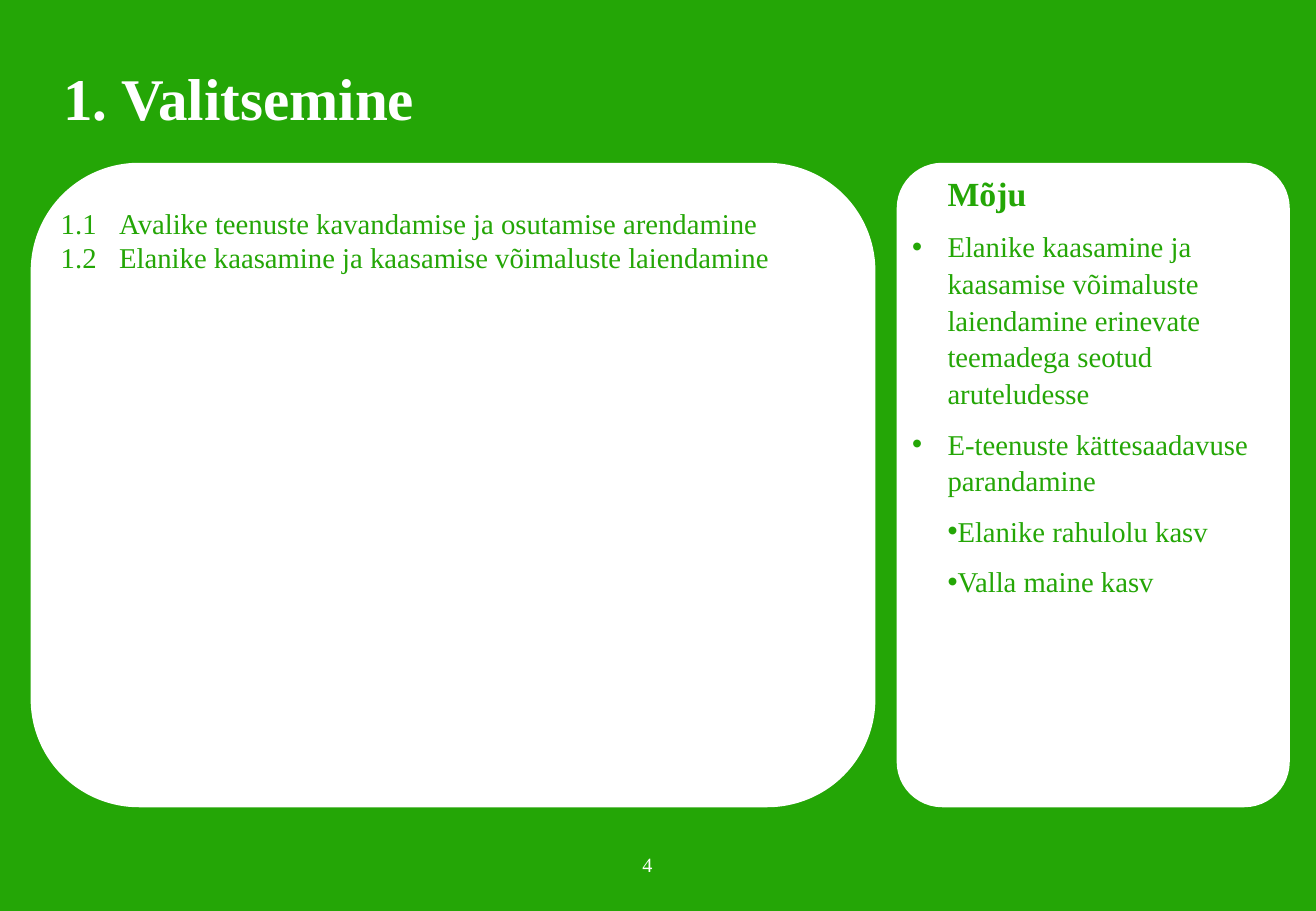
from pptx import Presentation
from pptx.dml.color import RGBColor
from pptx.enum.shapes import MSO_SHAPE as SHAPE
from pptx.enum.text import MSO_ANCHOR as ANCHOR, PP_ALIGN as ALIGN
from pptx.oxml.ns import qn
from pptx.util import Pt
from lxml.etree import SubElement

GREEN, WHITE = "24A606", "FFFFFF"


def color(value):
    return RGBColor.from_string(value)


def add_text(p, text, size=17, fill=GREEN, bold=False, font="Times New Roman",
             align=None, left=0, indent=0, spacing=None, after=0, bullet=None):
    r = p.add_run()
    r.text = text
    r.font.name = font
    r.font.size = Pt(size)
    r.font.bold = bold
    r.font.color.rgb = color(fill)
    p.alignment = align
    p.space_after = Pt(after)
    if spacing:
        p.line_spacing = spacing
    pPr = p._p.get_or_add_pPr()
    pPr.set("marL", str(Pt(left)))
    pPr.set("indent", str(Pt(indent)))
    if bullet:
        SubElement(pPr, qn("a:buFont"), typeface="Arial")
        SubElement(pPr, qn("a:buChar"), char=bullet)


class Deck:
    """Holds the slide style and the current slide."""

    def __init__(self, width, height, background):
        self.prs = Presentation()
        self.prs.slide_width, self.prs.slide_height = Pt(width), Pt(height)
        self.s = self.prs.slides.add_slide(self.prs.slide_layouts[6])
        self.s.background.fill.solid()
        self.s.background.fill.fore_color.rgb = color(background)

    def panel(self, x, y, w, h, corner):
        sp = self.s.shapes.add_shape(SHAPE.ROUNDED_RECTANGLE, Pt(x), Pt(y), Pt(w), Pt(h))
        sp.adjustments[0] = corner
        sp.shadow.inherit = False
        sp.fill.solid()
        sp.fill.fore_color.rgb = color(WHITE)
        sp.line.color.rgb = color(WHITE)
        sp.line.width = Pt(1)

    def text(self, x, y, w, h, items, inset=3.6, anchor=ANCHOR.MIDDLE, wrap=True):
        tf = self.s.shapes.add_textbox(Pt(x), Pt(y), Pt(w), Pt(h)).text_frame
        tf.word_wrap = wrap
        tf.vertical_anchor = anchor
        tf.margin_left = tf.margin_right = Pt(inset)
        tf.margin_top = tf.margin_bottom = Pt(3.6)
        for i, (text, style) in enumerate(items):
            p = tf.add_paragraph() if i else tf.paragraphs[0]
            add_text(p, text, **style)


def main():
    deck = Deck(780, 540, GREEN)
    top, height = 97, 381
    deck.panel(18.7, top, 499.7, height, 0.167)
    deck.panel(532, top, 232, height, 0.114)

    goal = dict(align=ALIGN.JUSTIFY, left=34.6, indent=-34.6)
    deck.text(32.4, 118, 471.6, 48.5, [
        ("1.1\tAvalike teenuste kavandamise ja osutamise arendamine", goal),
        ("1.2\tElanike kaasamine ja kaasamise võimaluste laiendamine", goal),
    ])
    deck.text(33.8, 37.4, 712, 45.4, [
        ("1. Valitsemine", dict(size=35, fill=WHITE, bold=True, spacing=0.9)),
    ])
    deck.text(376.6, 501.8, 13.7, 21.6, [
        ("4", dict(size=12, fill=WHITE, align=ALIGN.RIGHT)),
    ], wrap=False)

    body = dict(spacing=1.07, after=8)
    heading = dict(body, size=20, bold=True, indent=21)
    point = dict(body, left=21, indent=-21, bullet="•")
    subpoint = dict(body, indent=21, bullet="•")
    deck.text(533.5, top, 229, 262, [
        ("Mõju", heading),
        ("Elanike kaasamine ja kaasamise võimaluste laiendamine "
         "erinevate teemadega seotud aruteludesse", point),
        ("E-teenuste kättesaadavuse parandamine", point),
        ("Elanike rahulolu kasv", subpoint),
        ("Valla maine kasv", subpoint),
    ], inset=7.2, anchor=ANCHOR.TOP)

    deck.prs.save("out.pptx")


if __name__ == "__main__":
    main()
